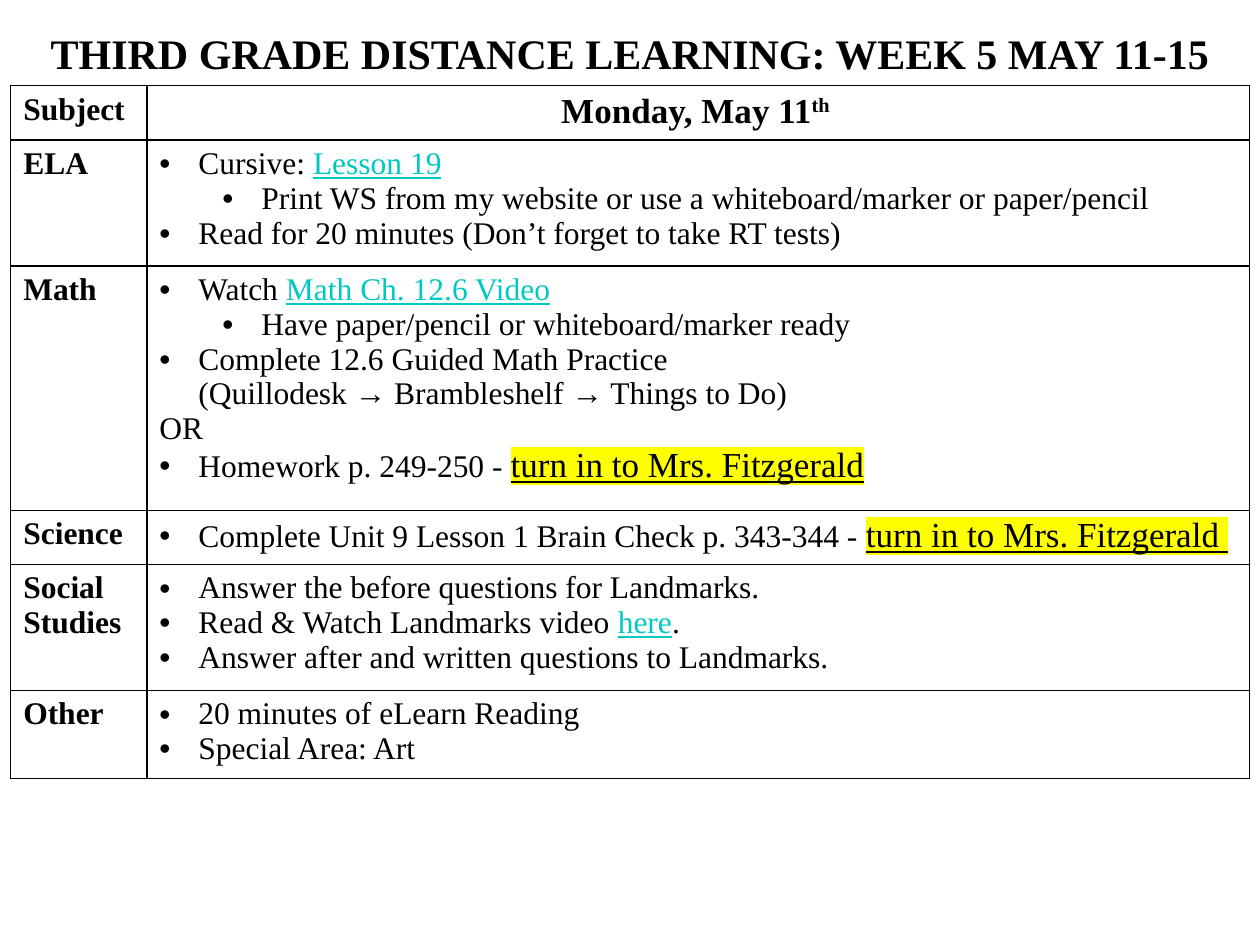
"""Builds a one-day distance learning plan slide with a subject table."""
from lxml import etree
from pptx import Presentation, util as u
from pptx.dml.color import RGBColor
from pptx.enum import text
from pptx.oxml import ns

COLORS = {"ink": "000000", "paper": "FFFFFF", "link": "00C8C3", "marker": "FFFF00"}
FONT = "Times New Roman"
SLIDE_W, SLIDE_H = 10, 7.5
TITLE = "THIRD GRADE DISTANCE LEARNING: WEEK 5 MAY 11-15"

STYLES = {
    "title": {"size": u.Pt(24), "bold": True},
    "subject": {"size": u.Pt(18), "bold": True},
    "day": {"size": u.Pt(20), "bold": True},
    "ordinal": {"size": u.Pt(20), "bold": True},
    "body": {"size": u.Pt(18), "bold": False},
    "link": {"size": u.Pt(18), "bold": False, "underline": True},
    "turn_in": {"size": u.Pt(20), "bold": False, "underline": True},
}
INDENTS = {"bullet": 0.31, "sub": 0.81}
HANGING = 0.31

PLAN = [
    ("Subject", 0.43, [("center", [("Monday, May 11", "day"), ("th ", "ordinal")])]),
    ("ELA", 1.0, [
        ("bullet", [("Cursive: ", "body"), ("Lesson 19", "link")]),
        ("sub", [("Print WS from my website or use a whiteboard/marker or paper/pencil", "body")]),
        ("bullet", [("Read for 20 minutes (Don’t forget to take RT tests)", "body")]),
    ]),
    ("Math", 1.94, [
        ("bullet", [("Watch ", "body"), ("Math Ch. 12.6 Video", "link")]),
        ("sub", [("Have paper/pencil or whiteboard/marker ready", "body")]),
        ("bullet", [("Complete 12.6 Guided Math Practice\n"
                     "(Quillodesk → Brambleshelf → Things to Do)", "body")]),
        ("plain", [("OR", "body")]),
        ("bullet", [("Homework p. 249-250 - ", "body"),
                    ("turn in to Mrs. Fitzgerald", "turn_in")]),
    ]),
    ("Science", 0.43, [
        ("bullet", [("Complete Unit 9 Lesson 1 Brain Check p. 343-344 - ", "body"),
                    ("turn in to Mrs. Fitzgerald ", "turn_in")]),
    ]),
    ("Social Studies", 1.0, [
        ("bullet", [("Answer the before questions for Landmarks.", "body")]),
        ("bullet", [("Read & Watch Landmarks video ", "body"), ("here", "link"), (".", "body")]),
        ("bullet", [("Answer after and written questions to Landmarks.", "body")]),
    ]),
    ("Other", 0.7, [
        ("bullet", [("20 minutes of eLearn Reading", "body")]),
        ("bullet", [("Special Area: Art", "body")]),
    ]),
]
COLUMNS = (1.08, 8.75)
TABLE_TOP = 0.68


def add_color(parent, tag, color):
    element = etree.SubElement(parent, ns.qn(tag))
    etree.SubElement(element, ns.qn("a:srgbClr"), val=COLORS[color])
    return element


def add_run(paragraph, words, style):
    run = paragraph.add_run()
    run.text = words
    for attribute, value in {"name": FONT, **STYLES[style]}.items():
        setattr(run.font, attribute, value)
    ink = "link" if style == "link" else "ink"
    run.font.color.rgb = RGBColor.from_string(COLORS[ink])
    properties = run.font._element
    if style == "ordinal":
        properties.set("baseline", "30000")
    if style == "turn_in":
        highlight = add_color(properties, "a:highlight", "marker")
        properties.find(ns.qn("a:latin")).addprevious(highlight)


def set_layout(paragraph, layout):
    if layout == "center":
        paragraph.alignment = text.PP_ALIGN.CENTER
    if layout in INDENTS:
        paragraph.level = list(INDENTS).index(layout)
        properties = paragraph._p.get_or_add_pPr()
        properties.set("marL", str(u.Inches(INDENTS[layout])))
        properties.set("indent", str(-u.Inches(HANGING)))
        etree.SubElement(properties, ns.qn("a:buFont"), typeface="Arial")
        etree.SubElement(properties, ns.qn("a:buChar"), char="•")


def write(frame, paragraphs):
    for index, (layout, runs) in enumerate(paragraphs):
        paragraph = frame.add_paragraph() if index else frame.paragraphs[0]
        set_layout(paragraph, layout)
        for words, style in runs:
            for line, part in enumerate(words.split("\n")):
                if line:
                    paragraph.add_line_break()
                add_run(paragraph, part, style)


def format_cell(cell):
    properties = cell._tc.get_or_add_tcPr()
    for side in "LRTB":
        border = etree.SubElement(properties, ns.qn(f"a:ln{side}"), w=str(u.Pt(1)))
        add_color(border, "a:solidFill", "ink")
    cell.fill.solid()
    cell.fill.fore_color.rgb = RGBColor.from_string(COLORS["paper"])


def add_title(slide):
    title = slide.shapes.add_textbox(0, u.Inches(0.17), u.Inches(SLIDE_W), u.Inches(0.5))
    title.text_frame.word_wrap = True
    write(title.text_frame, [("center", [(TITLE, "title")])])


def add_plan(slide):
    width, height = sum(COLUMNS), sum(row[1] for row in PLAN)
    left = (SLIDE_W - width) / 2
    plan = slide.shapes.add_table(len(PLAN), len(COLUMNS), u.Inches(left), u.Inches(TABLE_TOP),
                                  u.Inches(width), u.Inches(height)).table
    plan.first_row = plan.horz_banding = False
    for column, share in zip(plan.columns, COLUMNS):
        column.width = u.Inches(share)
    for row, (subject, row_height, tasks) in zip(plan.rows, PLAN):
        row.height = u.Inches(row_height)
        for cell, content in zip(row.cells, ([("plain", [(subject, "subject")])], tasks)):
            format_cell(cell)
            write(cell.text_frame, content)


def main():
    deck = Presentation()
    deck.slide_width, deck.slide_height = u.Inches(SLIDE_W), u.Inches(SLIDE_H)
    slide = deck.slides.add_slide(deck.slide_layouts[6])
    add_plan(slide)
    add_title(slide)
    deck.save("out.pptx")


if __name__ == "__main__":
    main()
